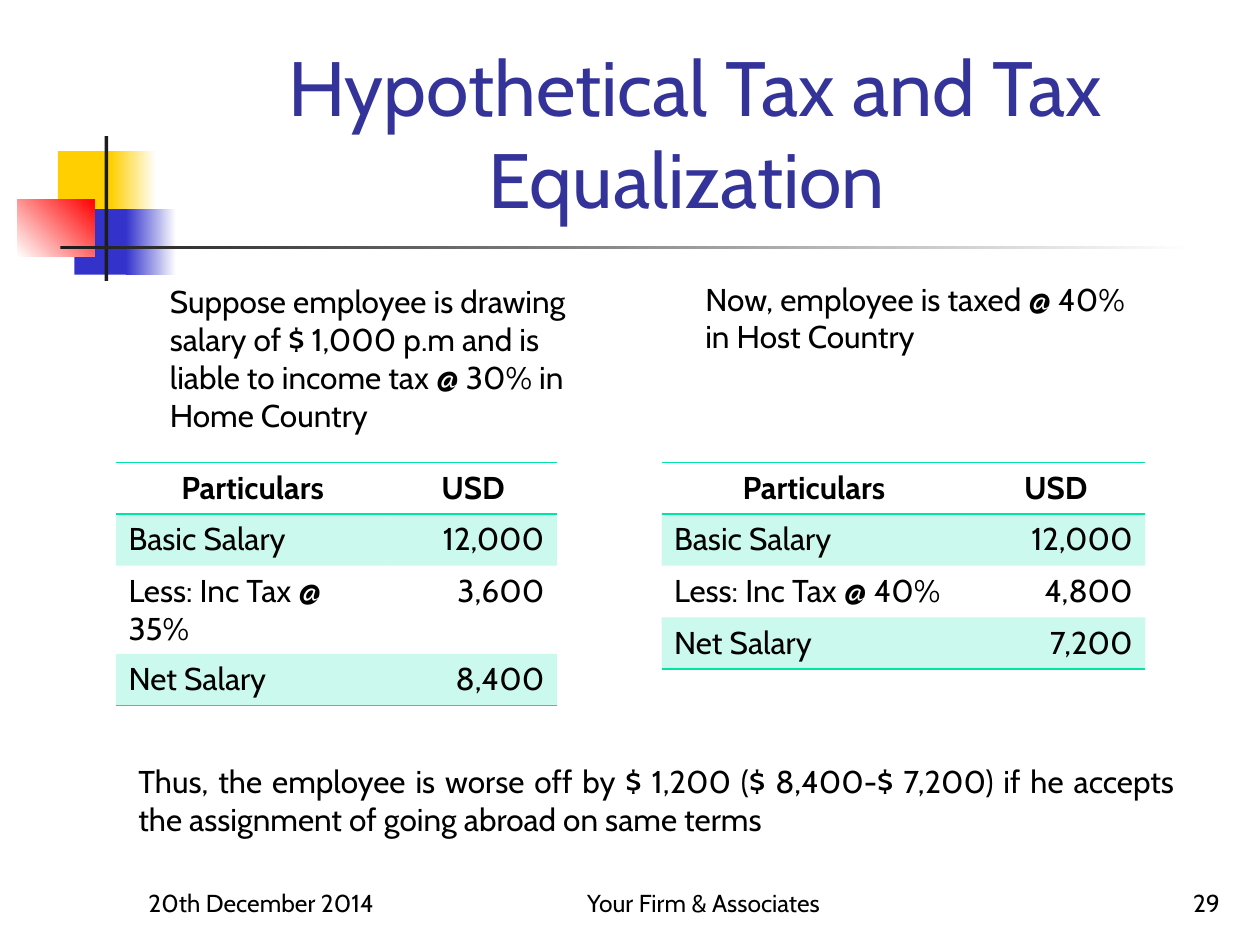
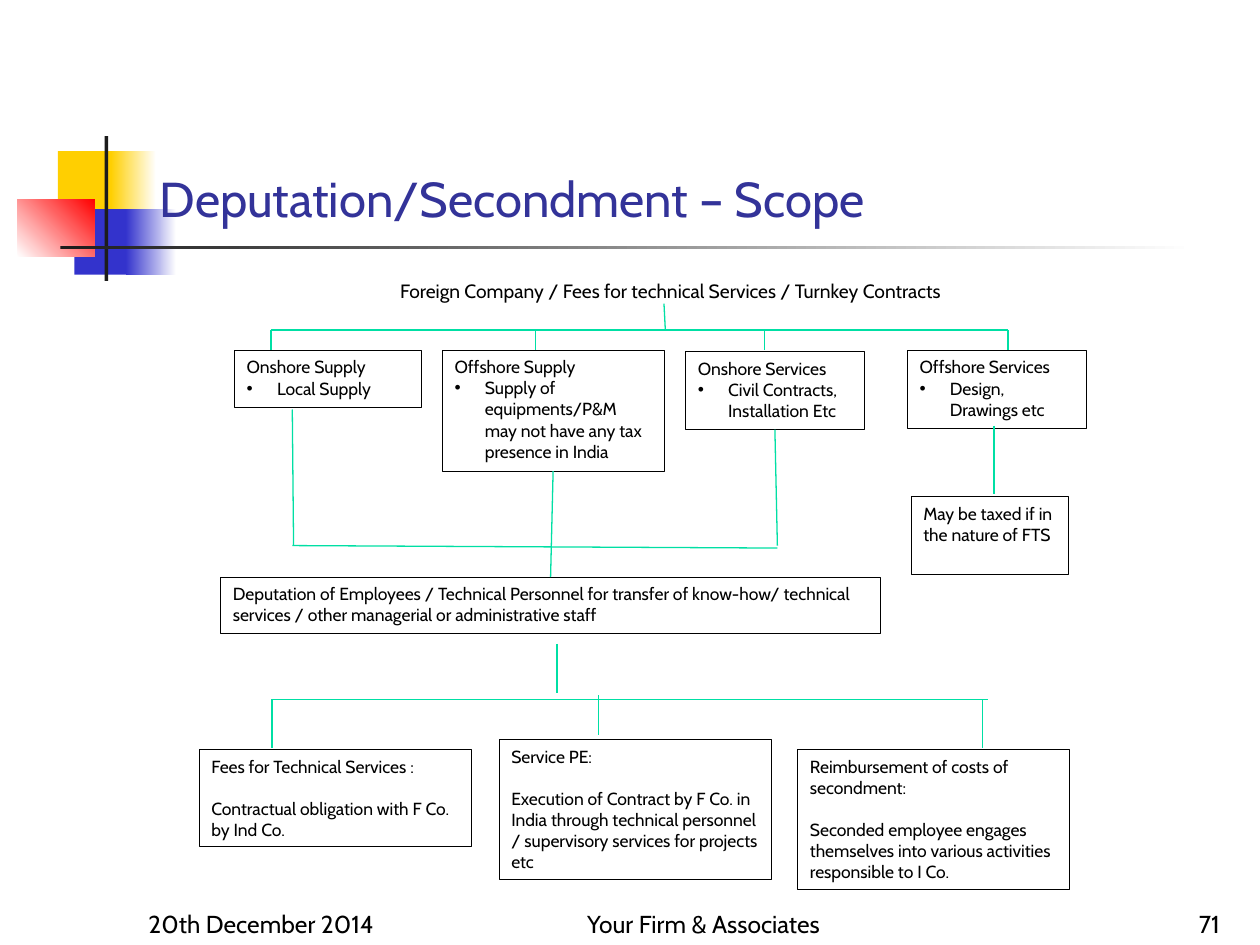
from lxml import etree
from pptx import Presentation
from pptx.dml.color import RGBColor
from pptx.enum.shapes import MSO_CONNECTOR, MSO_SHAPE
from pptx.enum.text import MSO_ANCHOR, PP_ALIGN
from pptx.oxml.ns import qn
from pptx.util import Inches, Pt

RECTANGLE = MSO_SHAPE.RECTANGLE
STRAIGHT = MSO_CONNECTOR.STRAIGHT
TOP, BOTTOM = MSO_ANCHOR.TOP, MSO_ANCHOR.BOTTOM
LEFT, CENTER, RIGHT, JUSTIFY = PP_ALIGN.LEFT, PP_ALIGN.CENTER, PP_ALIGN.RIGHT, PP_ALIGN.JUSTIFY

FONT = "Cabin"
NO_TABLE_STYLE = "{2D5ABB26-0587-4C30-8999-92F81FD0307C}"
COLORS = {
    "text": "000000",
    "title": "333399",
    "white": "FFFFFF",
    "yellow": "FFCF01",
    "blue": "3333CC",
    "red": "FF0000",
    "bar": "1C1C1C",
    "table": "00E4A8",
    "branch": "00DFA4",
}


def rgb(name):
    """Return the named colour."""
    return RGBColor.from_string(COLORS[name])


def write(para, text, size, color="text", align=LEFT, bold=False):
    """Add one formatted run to a paragraph."""
    para.alignment = align
    span = para.add_run()
    span.text = text
    span.font.name = FONT
    span.font.size = Pt(size)
    span.font.bold = bold
    span.font.color.rgb = rgb(color)


def add_bullet(para):
    """Give a paragraph a hanging round bullet."""
    props = para._p.get_or_add_pPr()
    props.set("marL", str(Inches(0.24)))
    props.set("indent", str(-Inches(0.24)))
    etree.SubElement(props, qn("a:buFont")).set("typeface", "Arial")
    etree.SubElement(props, qn("a:buChar")).set("char", "•")


def add_text(page, box, text, size, color="text", align=LEFT, anchor=TOP):
    """Add a wrapped one-paragraph text box."""
    frame = page.shapes.add_textbox(*map(Inches, box)).text_frame
    frame.word_wrap = True
    frame.vertical_anchor = anchor
    write(frame.paragraphs[0], text, size, color, align)


def add_block(page, box, start, end=None, angle=0):
    """Add a borderless rectangle, plain or fading from start to end."""
    block = page.shapes.add_shape(RECTANGLE, *map(Inches, box))
    block.shadow.inherit = False
    block.line.fill.background()
    if end is None:
        block.fill.solid()
        block.fill.fore_color.rgb = rgb(start)
        return
    block.fill.gradient()
    block.fill.gradient_angle = angle
    for stop, name, position in zip(block.fill.gradient_stops, (start, end), (0, 1)):
        stop.color.rgb = rgb(name)
        stop.position = position


def add_emblem(page):
    """Draw the coloured squares and the fading rule."""
    add_block(page, (0.46, 1.2, 0.48, 0.52), "yellow")
    add_block(page, (0.88, 1.2, 0.36, 0.52), "yellow", "white")
    add_block(page, (0.59, 1.66, 0.46, 0.52), "blue")
    add_block(page, (1, 1.66, 0.4, 0.52), "blue", "white")
    add_block(page, (0.14, 1.58, 0.61, 0.46), "white", "red", 45)
    add_block(page, (0.83, 1.08, 0.03, 1.15), "bar")
    add_block(page, (0.48, 1.95, 9, 0.03), "bar", "white")


def add_footer(page, top, number):
    """Write the date, the firm and the page number."""
    add_text(page, (4, top, 3.17, 0.5), "Your Firm & Associates", 14, align=CENTER, anchor=BOTTOM)
    add_text(page, (7.7, top, 2.08, 0.5), number, 14, align=RIGHT, anchor=BOTTOM)
    add_text(page, (1.08, top, 2.08, 0.5), "20th December 2014", 14, anchor=BOTTOM)


def start_page(deck, title, title_box, title_size, title_align, footer_top, number):
    """Add a page with the shared emblem, footer and title."""
    page = deck.slides.add_slide(deck.slide_layouts[6])
    add_emblem(page)
    add_footer(page, footer_top, number)
    add_text(page, title_box, title, title_size, "title", title_align, BOTTOM)
    return page


def add_solid(parent, name, alpha=None):
    """Append a solid fill, optionally transparent, to an XML element."""
    fill = etree.SubElement(parent, qn("a:solidFill"))
    color = etree.SubElement(fill, qn("a:srgbClr"))
    color.set("val", COLORS[name])
    if alpha is not None:
        etree.SubElement(color, qn("a:alpha")).set("val", str(alpha * 1000))


def style_cell(cell, sides, shaded):
    """Draw the given cell borders and the pale band."""
    props = cell._tc.get_or_add_tcPr()
    for side in sides:
        border = etree.SubElement(props, qn(f"a:ln{side}"))
        border.set("w", str(Pt(1)))
        add_solid(border, "table")
    if shaded:
        add_solid(props, "table", 20)
    else:
        etree.SubElement(props, qn("a:noFill"))


def add_salary_table(page, left, top, widths, tax_label, tax, net):
    """Add a salary computation table at the given corner."""
    rows = [("Particulars", "USD"), ("Basic Salary", "12,000"), (tax_label, tax), ("Net Salary", net)]
    row_height = 0.41
    frame = page.shapes.add_table(
        len(rows), len(widths), *map(Inches, (left, top, sum(widths), row_height * len(rows))))
    frame._element.find(".//" + qn("a:tableStyleId")).text = NO_TABLE_STYLE
    table = frame.table
    table.first_row = table.horz_banding = False
    for column, width in zip(table.columns, widths):
        column.width = Inches(width)
    borders = {0: "TB", len(rows) - 1: "B"}
    for r, row in enumerate(rows):
        table.rows[r].height = Inches(row_height)
        for c, text in enumerate(row):
            cell = table.cell(r, c)
            align = CENTER if r == 0 else (LEFT, RIGHT)[c]
            write(cell.text_frame.paragraphs[0], text, 18, align=align, bold=r == 0)
            style_cell(cell, borders.get(r, ""), r % 2 == 1)


def build_tax_page(deck):
    """Build the page comparing home and host country tax."""
    page = start_page(deck, "Hypothetical Tax and Tax Equalization ",
                      (1.26, 0.23, 8.52, 1.6), 44, CENTER, 6.83, "29")
    add_text(page, (1.25, 2.19, 3.67, 1.31),
             "Suppose employee is drawing salary of $ 1,000 p.m and is liable to "
             "income tax @ 30% in Home Country", 18)
    add_salary_table(page, 0.92, 3.67, (2.17, 1.33), "Less: Inc Tax @ 35%", "3,600", "8,400")
    add_text(page, (5.5, 2.17, 3.67, 0.71), "Now, employee is taxed @ 40% in Host Country", 18)
    add_salary_table(page, 5.25, 3.67, (2.42, 1.42), "Less: Inc Tax @ 40%", "4,800", "7,200")
    add_text(page, (1, 6, 8.42, 0.71),
             "Thus, the employee is worse off by $ 1,200 ($ 8,400-$ 7,200) if he accepts "
             "the assignment of going abroad on same terms", 18, align=JUSTIFY)


def add_node(page, box, heading, detail=None, bulleted=False):
    """Add an outlined box with a heading and an optional detail."""
    node = page.shapes.add_shape(RECTANGLE, *map(Inches, box))
    node.shadow.inherit = False
    node.fill.background()
    node.line.color.rgb = rgb("text")
    node.line.width = Pt(0.25)
    frame = node.text_frame
    frame.word_wrap = True
    frame.vertical_anchor = TOP
    write(frame.paragraphs[0], heading, 10)
    if detail:
        para = frame.add_paragraph()
        if bulleted:
            add_bullet(para)
        else:
            para.space_before = Pt(12)
        write(para, detail, 10)


def add_branches(page, left, top, lines):
    """Draw green lines given as offsets from a corner."""
    for x1, y1, x2, y2 in lines:
        ends = (left + x1, top + y1, left + x2, top + y2)
        branch = page.shapes.add_connector(STRAIGHT, *map(Inches, ends))
        branch.line.color.rgb = rgb("branch")
        branch.line.width = Pt(0.75)
        etree.SubElement(branch._element.spPr, qn("a:effectLst"))


def add_contract_types(page, left, top):
    """Draw the heading and the four kinds of contract below it."""
    add_text(page, (left + 0.3, top, 6.33, 0.29),
             "Foreign Company / Fees for technical Services / Turnkey Contracts", 11, align=CENTER)
    contracts = [
        (0, 0.61, 1.48, 0.45, "Onshore Supply", "Local Supply"),
        (1.65, 0.61, 1.76, 0.96, "Offshore Supply",
         "Supply of equipments/P&M may not have any tax presence in India"),
        (3.58, 0.62, 1.42, 0.62, "Onshore Services", "Civil Contracts, Installation Etc"),
        (5.34, 0.61, 1.42, 0.62, "Offshore Services", "Design, Drawings etc"),
    ]
    for x, y, width, height, heading, detail in contracts:
        add_node(page, (left + x, top + y, width, height), heading, detail, bulleted=True)
    drops = (0.29, 2.39, 4.21, 6.14)
    add_branches(page, left, top, [
        (drops[0], 0.45, drops[-1], 0.45),
        *((x, 0.45, x, 0.61) for x in drops),
        (3.41, 0.24, 3.42, 0.44),
    ])


def add_deputation(page, left, top):
    """Draw the merge into deputation and the taxed offshore services."""
    add_node(page, (left + 5.48, top + 0.69, 1.25, 0.62), "May be taxed if in the nature of FTS")
    add_node(page, (left, top + 1.33, 5.24, 0.45),
             "Deputation of Employees / Technical Personnel for transfer of know-how/ "
             "technical services / other managerial or administrative staff")
    add_branches(page, left, top, [
        (6.14, 0.13, 6.14, 0.67),
        (0.57, 0, 0.58, 1.08),
        (4.4, 0.16, 4.42, 1.08),
        (0.57, 1.08, 4.42, 1.1),
        (2.64, 0.49, 2.62, 1.33),
    ])


def add_outcomes(page, left, top):
    """Draw the three tax outcomes of a deputation."""
    outcomes = [
        (0, 0.84, 0.77, "Fees for Technical Services :",
         "Contractual obligation with F Co. by Ind Co."),
        (2.38, 0.76, 1.11, "Service PE:",
         "Execution of Contract by F Co. in India through technical personnel "
         "/ supervisory services for projects etc"),
        (4.75, 0.84, 1.11, "Reimbursement of costs of secondment:",
         "Seconded employee engages themselves into various activities responsible to I Co."),
    ]
    for x, y, height, heading, detail in outcomes:
        add_node(page, (left + x, top + y, 2.16, height), heading, detail)
    add_branches(page, left, top, [
        (3.17, 0.41, 3.17, 0.72),
        (0.58, 0.44, 6.26, 0.44),
        (0.58, 0.44, 0.58, 0.83),
        (2.84, 0, 2.84, 0.39),
        (6.22, 0.44, 6.22, 0.83),
    ])


def build_scope_page(deck):
    """Build the page charting the scope of deputation."""
    page = start_page(deck, "Deputation/Secondment – Scope",
                      (1.17, 0.25, 8.74, 1.6), 28, LEFT, 7, "71")
    add_contract_types(page, 1.86, 2.17)
    add_deputation(page, 1.75, 3.25)
    add_outcomes(page, 1.58, 5.11)


def main():
    """Build and save the deck."""
    deck = Presentation()
    deck.slide_width, deck.slide_height = Inches(10), Inches(7.5)
    build_tax_page(deck)
    build_scope_page(deck)
    deck.save("out.pptx")


if __name__ == "__main__":
    main()
